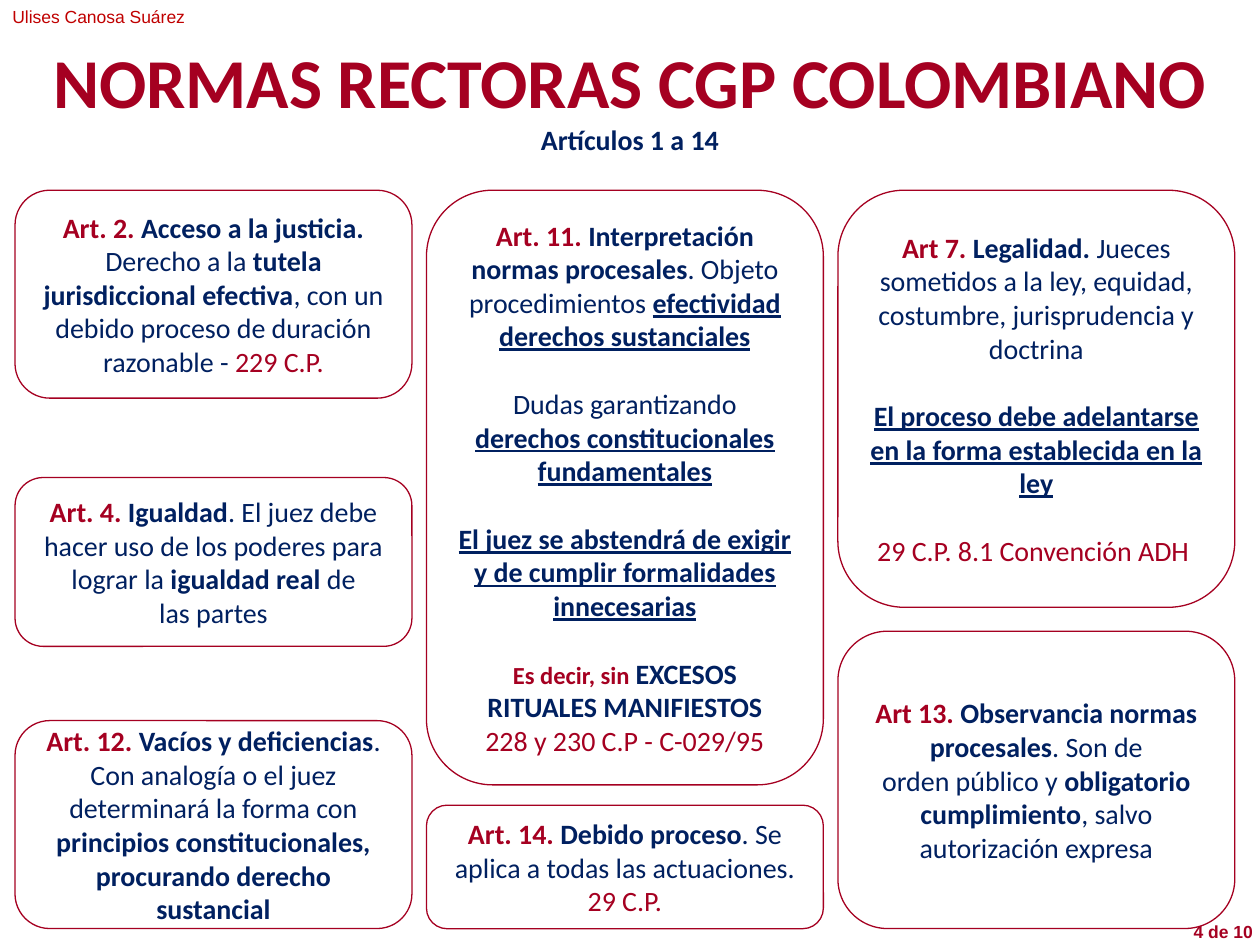
from pptx import Presentation
from pptx.dml.color import RGBColor
from pptx.enum.shapes import MSO_SHAPE
from pptx.enum.text import MSO_ANCHOR, PP_ALIGN
from pptx.util import Pt

RED, NAVY, BRIGHT_RED = "A50021", "002060", "C00000"
BLANK_LINE = 19.5

# name: (font, size, colour, bold, underline)
STYLES = {
    "title": ("Calibri", 40, RED, True, False),
    "art": ("Calibri", 16, RED, True, False),
    "cite": ("Calibri", 16, RED, False, False),
    "lead": ("Calibri", 14, RED, True, False),
    "bold": ("Calibri", 16, NAVY, True, False),
    "plain": ("Calibri", 16, NAVY, False, False),
    "key": ("Calibri", 16, NAVY, True, True),
    "author": ("Arial", 10, BRIGHT_RED, False, False),
    "page": ("Arial", 10, RED, True, False),
}

COLUMN_LEFT, COLUMN_PITCH, CARD_WIDTH = 8.6, 235.1, 226.8

# (column, top, height, blocks); a block is a list of paragraphs,
# and a blank line's space separates one block from the next
CARDS = [
    (0, 108.7, 118.8, [[
        [("art", "Art. 2. "), ("bold", "Acceso a la justicia. "),
         ("plain", "Derecho a la "), ("bold", "tutela jurisdiccional efectiva"),
         ("plain", ", con un debido proceso de duración razonable - "),
         ("cite", "229 C.P.")],
    ]]),
    (0, 272.9, 96.5, [[
        [("art", "Art. 4. "), ("bold", "Igualdad"),
         ("plain", ". El juez debe hacer uso de los poderes para lograr la "),
         ("bold", "igualdad real "), ("plain", "de")],
        [("plain", "las partes")],
    ]]),
    (0, 411.8, 118.8, [[
        [("art", "Art. 12. "), ("bold", "Vacíos y deficiencias"),
         ("plain", ". Con analogía o el juez determinará la forma con "),
         ("bold", "principios constitucionales, procurando derecho sustancial")],
    ]]),
    (1, 108.7, 339.8, [
        [[("art", "Art. 11. "), ("bold", "Interpretación normas procesales"),
          ("plain", ". Objeto procedimientos "),
          ("key", "efectividad derechos sustanciales")]],
        [[("plain", "Dudas garantizando "),
          ("key", "derechos constitucionales fundamentales")]],
        [[("key", "El juez se abstendrá de exigir y de cumplir "
                  "formalidades innecesarias")]],
        [[("lead", "Es decir, sin "), ("bold", "EXCESOS RITUALES MANIFIESTOS")],
         [("cite", "228 y 230 C.P - C-029/95")]],
    ]),
    (1, 460.1, 70.6, [[
        [("art", "Art. 14. "), ("bold", "Debido proceso"),
         ("plain", ". Se aplica a todas las actuaciones. "),
         ("cite", "29 C.P.")],
    ]]),
    (2, 108.7, 238.3, [
        [[("art", "Art 7. "), ("bold", "Legalidad. "),
          ("plain", "Jueces sometidos a la ley, equidad, costumbre, "
                    "jurisprudencia y doctrina")]],
        [[("key", "El proceso debe adelantarse en la forma "
                  "establecida en la ley")]],
        [[("cite", "29 C.P. 8.1 Convención ADH ")]],
    ]),
    (2, 360.7, 169.9, [[
        [("art", "Art 13. "), ("bold", "Observancia normas")],
        [("bold", "procesales"), ("plain", ". Son de")],
        [("plain", "orden público y "), ("bold", "obligatorio")],
        [("bold", "cumplimiento"), ("plain", ", salvo autorización expresa")],
    ]]),
]


def color(value):
    return RGBColor.from_string(value)


class SlideBuilder:
    def __init__(self, slide):
        self.s = slide

    def fill_text(self, tf, blocks, align):
        """Fill a text frame with blocks of paragraphs made of styled runs."""
        tf.word_wrap = True
        p = None
        for block in blocks:
            for i, runs in enumerate(block):
                first = p is None
                p = tf.paragraphs[0] if first else tf.add_paragraph()
                p.alignment = align
                if i == 0 and not first:
                    p.space_before = Pt(BLANK_LINE)
                for style, text in runs:
                    r = p.add_run()
                    r.text = text
                    name, size, fill, bold, underline = STYLES[style]
                    r.font.name, r.font.size = name, Pt(size)
                    r.font.color.rgb = color(fill)
                    r.font.bold, r.font.underline = bold, underline

    def text(self, x, y, w, h, paragraphs, align):
        sp = self.s.shapes.add_textbox(Pt(x), Pt(y), Pt(w), Pt(h))
        self.fill_text(sp.text_frame, [paragraphs], align)

    def card(self, column, top, height, blocks):
        sp = self.s.shapes.add_shape(
            MSO_SHAPE.ROUNDED_RECTANGLE,
            Pt(COLUMN_LEFT + column * COLUMN_PITCH), Pt(top),
            Pt(CARD_WIDTH), Pt(height))
        sp.shadow.inherit = False
        sp.fill.background()
        sp.line.color.rgb = color(RED)
        sp.line.width = Pt(0.75)
        sp.text_frame.vertical_anchor = MSO_ANCHOR.MIDDLE
        self.fill_text(sp.text_frame, blocks, PP_ALIGN.CENTER)


def main():
    prs = Presentation()
    prs.slide_width, prs.slide_height = Pt(720), Pt(540)
    s = SlideBuilder(prs.slides.add_slide(prs.slide_layouts[6]))
    s.text(0, 0, 212.4, 19.4, [[("author", "Ulises Canosa Suárez")]],
           PP_ALIGN.LEFT)
    s.text(0, 18.7, 720, 45.4,
           [[("title", "NORMAS RECTORAS CGP COLOMBIANO")],
            [("bold", "Artículos 1 a 14")]], PP_ALIGN.CENTER)
    for card in CARDS:
        s.card(*card)
    s.text(652.3, 522.7, 70.6, 19.4, [[("page", "4 de 10")]], PP_ALIGN.RIGHT)
    prs.save("out.pptx")


if __name__ == "__main__":
    main()
